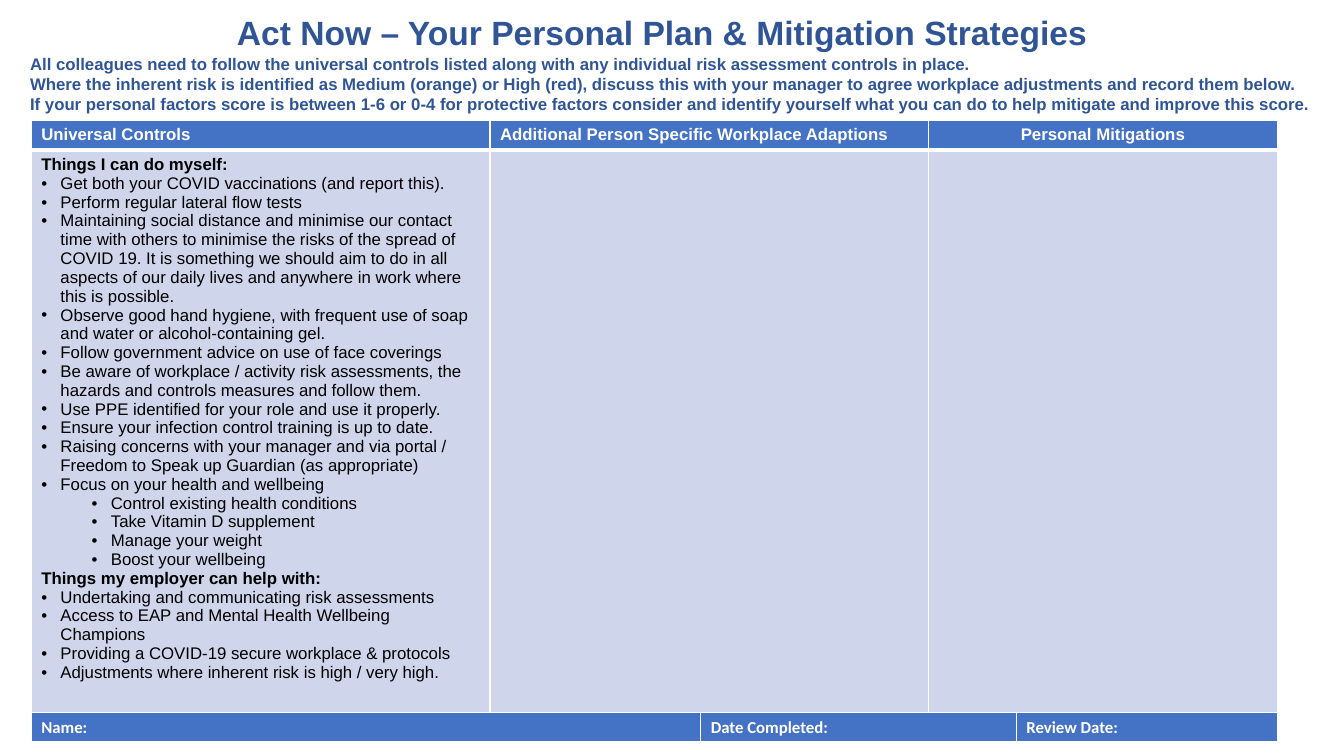
import pptx
import pptx.dml.color
import pptx.enum.text
import pptx.oxml
import pptx.oxml.ns
import pptx.util

Inches = pptx.util.Inches
BLUE, PALE, NAVY, WHITE, BLACK = "4472C4", "CFD5EA", "2F5597", "FFFFFF", "000000"
HEADING = -1
TABLE_LEFT = 0.31
HEADER_TOP, HEADER_HEIGHT, BODY_HEIGHT = 1.19, 0.3, 5.58
FOOTER_TOP = HEADER_TOP + HEADER_HEIGHT + BODY_HEIGHT

deck = pptx.Presentation()
deck.slide_width, deck.slide_height = Inches(13.33), Inches(7.5)
slide = deck.slides.add_slide(deck.slide_layouts[6])


def write(frame, lines, color, size=12, font="Arial"):
    """Write (level, text) lines; headings are bold, other levels are bulleted."""
    frame.text = "\n".join(text for level, text in lines)
    for paragraph, (level, text) in zip(frame.paragraphs, lines):
        for run in paragraph.runs:
            run.font.name, run.font.size = font, pptx.util.Pt(size)
            run.font.bold = level == HEADING
            run.font.color.rgb = pptx.dml.color.RGBColor.from_string(color)
        if level != HEADING:
            paragraph.level = level
            properties = paragraph._p.get_or_add_pPr()
            properties.set("marL", str(Inches(0.19 + 0.5 * level)))
            properties.set("indent", str(Inches(-0.19)))
            namespace = pptx.oxml.ns.nsdecls("a")
            for bullet in ('buFont typeface="Arial"', 'buChar char="•"'):
                properties.append(pptx.oxml.parse_xml(f"<a:{bullet} {namespace}/>"))


def add_grid(top, columns, rows, fills):
    """Add a table with one fill per row and white rules, thick under the first row."""
    table = slide.shapes.add_table(
        len(rows), len(columns), Inches(TABLE_LEFT), Inches(top),
        Inches(sum(columns)), Inches(sum(rows))).table
    table.horz_banding = False
    for column, width in zip(table.columns, columns):
        column.width = Inches(width)
    for index, (row, height, fill) in enumerate(zip(table.rows, rows, fills)):
        row.height = Inches(height)
        widths = {"L": 1, "R": 1, "T": 3 if index else 1, "B": 1 if index else 3}
        for cell in row.cells:
            cell.fill.solid()
            cell.fill.fore_color.rgb = pptx.dml.color.RGBColor.from_string(fill)
            for place, (side, points) in enumerate(widths.items()):
                cell._tc.get_or_add_tcPr().insert(place, pptx.oxml.parse_xml(
                    f'<a:ln{side} {pptx.oxml.ns.nsdecls("a")} w="{pptx.util.Pt(points)}">'
                    f'<a:solidFill><a:srgbClr val="{WHITE}"/></a:solidFill></a:ln{side}>'))
    return table


controls = [
    (HEADING, "Things I can do myself:"),
    (0, "Get both your COVID vaccinations (and report this)."),
    (0, "Perform regular lateral flow tests"),
    (0, "Maintaining social distance and minimise our contact time with others to minimise "
        "the risks of the spread of COVID 19. It is something we should aim to do in all "
        "aspects of our daily lives and anywhere in work where this is possible."),
    (0, "Observe good hand hygiene, with frequent use of soap and water or "
        "alcohol-containing gel."),
    (0, "Follow government advice on use of face coverings"),
    (0, "Be aware of workplace / activity risk assessments, the hazards and controls "
        "measures and follow them."),
    (0, "Use PPE identified for your role and use it properly."),
    (0, "Ensure your infection control training is up to date."),
    (0, "Raising concerns with your manager and via portal / Freedom to Speak up Guardian "
        "(as appropriate)"),
    (0, "Focus on your health and wellbeing"),
    (1, "Control existing health conditions"),
    (1, "Take Vitamin D supplement"),
    (1, "Manage your weight"),
    (1, "Boost your wellbeing"),
    (HEADING, "Things my employer can help with:"),
    (0, "Undertaking and communicating risk assessments"),
    (0, "Access to EAP and Mental Health Wellbeing Champions"),
    (0, "Providing a COVID-19 secure workplace & protocols"),
    (0, "Adjustments where inherent risk is high / very high."),
]
plan = add_grid(HEADER_TOP, (4.55, 4.35, 3.46), (HEADER_HEIGHT, BODY_HEIGHT), (BLUE, PALE))
plan_heads = ("Universal Controls", "Additional Person Specific Workplace Adaptions",
              "Personal Mitigations")
for cell, head in zip(plan.rows[0].cells, plan_heads):
    write(cell.text_frame, [(HEADING, head)], WHITE)
plan.cell(0, 2).text_frame.paragraphs[0].alignment = pptx.enum.text.PP_ALIGN.CENTER
write(plan.cell(1, 0).text_frame, controls, BLACK)

signoff = add_grid(FOOTER_TOP, (6.64, 3.13, 2.59), (HEADER_HEIGHT,), (BLUE,))
for cell, label in zip(signoff.rows[0].cells, ("Name:", "Date Completed:", "Review Date:")):
    write(cell.text_frame, [(HEADING, label)], WHITE, font="Calibri")

title = ["Act Now – Your Personal Plan & Mitigation Strategies"]
guidance = [
    "All colleagues need to follow the universal controls listed along with any individual "
    "risk assessment controls in place.",
    "Where the inherent risk is identified as Medium (orange) or High (red), discuss this "
    "with your manager to agree workplace adjustments and record them below.",
    "If your personal factors score is between 1-6 or 0-4 for protective factors consider "
    "and identify yourself what you can do to help mitigate and improve this score.",
]
for lines, size, box in ((title, 24, (2.25, 0.07, 11.08, 0.5)),
                         (guidance, 12, (0.2, 0.48, 12.93, 0.71))):
    frame = slide.shapes.add_textbox(*map(Inches, box)).text_frame
    frame.word_wrap = True
    write(frame, [(HEADING, line) for line in lines], NAVY, size)

deck.save("out.pptx")
